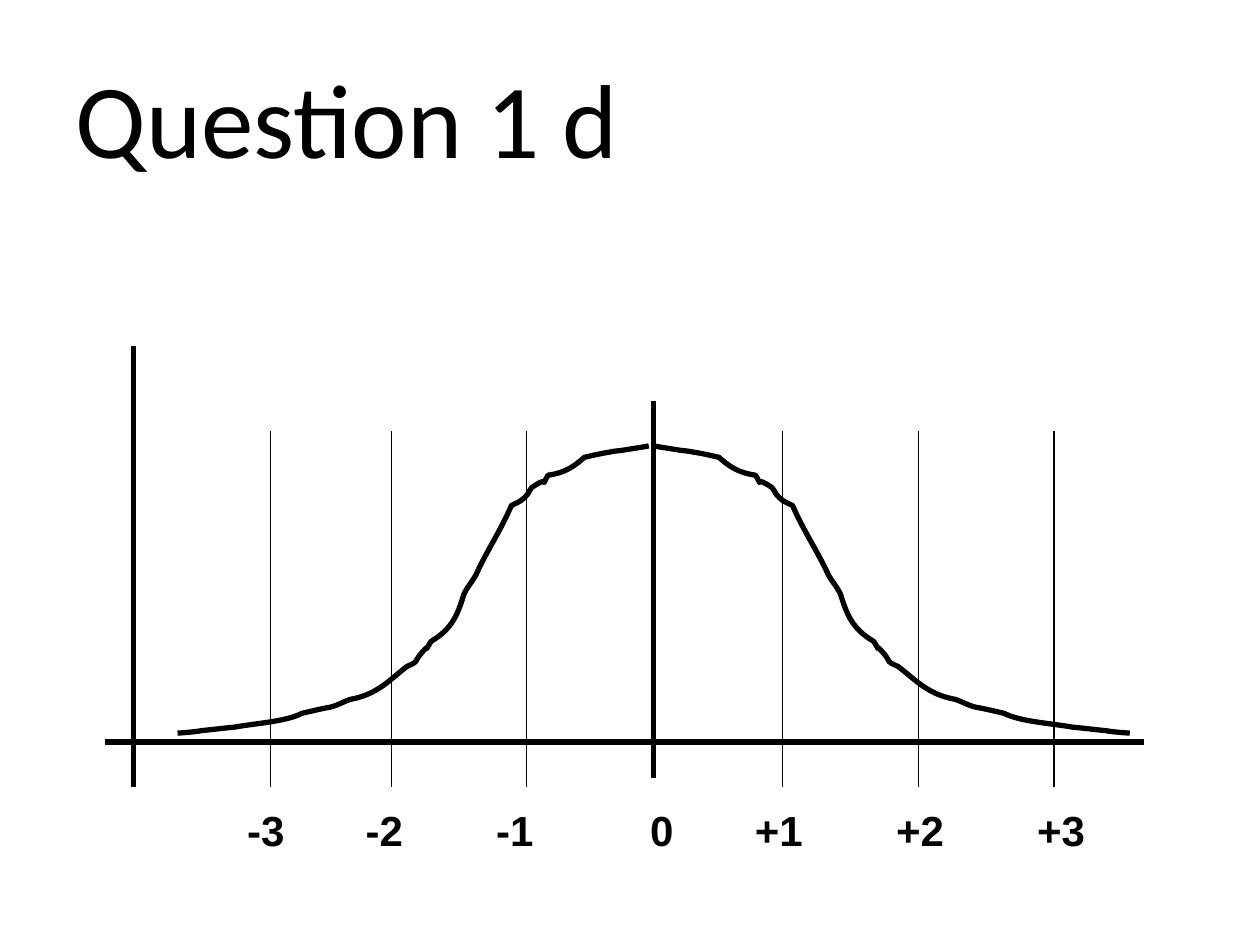
from dataclasses import dataclass

from lxml import etree
from pptx import Presentation
from pptx.dml.color import RGBColor
from pptx.enum.shapes import MSO_CONNECTOR
from pptx.enum.text import MSO_ANCHOR, PP_ALIGN
from pptx.oxml.ns import qn
from pptx.util import Cm, Pt

STRAIGHT = MSO_CONNECTOR.STRAIGHT
LEFT, MIDDLE, TOP = PP_ALIGN.LEFT, MSO_ANCHOR.MIDDLE, MSO_ANCHOR.TOP
BLACK = RGBColor(0x00, 0x00, 0x00)
THICK, THIN = 3, 0.75
TITLE_ONLY = 5


@dataclass(frozen=True)
class Rule:
    """A straight line, in centimetres."""
    x1: float
    y1: float
    x2: float
    y2: float
    weight: float


@dataclass(frozen=True)
class Deviation:
    """A mark on the scale: its label and the centre of that label."""
    label: str
    label_x: float


@dataclass(frozen=True)
class CurveHalf:
    """One side of the bell: where it starts and how it is stretched."""
    start_x: float
    stretch: float


BASELINE = Rule(2.11, 14.96, 23.06, 14.96, THICK)
UPRIGHTS = [
    Rule(13.18, 8.08, 13.18, 15.69, THICK),
    Rule(2.69, 6.98, 2.69, 15.87, THICK),
]
GRID = [Rule(x, 8.68, x, 15.87, THIN)
        for x in (10.62, 7.89, 5.46, 18.52, 15.78, 21.25)]

DEVIATIONS = [
    Deviation("-3", 5.36), Deviation("-2", 7.75), Deviation("-1", 10.38),
    Deviation("0", 13.34),
    Deviation("+1", 15.7), Deviation("+2", 18.55), Deviation("+3", 21.39),
]

HALVES = [CurveHalf(13.08, -1), CurveHalf(13.18, 1.01)]
# Distance from the peak and height on the slide: start, then three per Bezier
BELL = [
    (0, 8.99),
    (0.15, 9.02), (0.3, 9.04), (0.48, 9.07),
    (0.58, 9.09), (0.71, 9.09), (0.81, 9.12),
    (0.97, 9.14), (1.3, 9.22), (1.3, 9.22),
    (1.5, 9.4), (1.68, 9.53), (2.03, 9.58),
    (2.24, 9.93), (1.93, 9.53), (2.36, 9.83),
    (2.41, 9.86), (2.39, 9.91), (2.44, 9.96),
    (2.54, 10.08), (2.59, 10.11), (2.77, 10.19),
    (2.97, 10.67), (3.28, 11.13), (3.48, 11.58),
    (3.56, 11.73), (3.68, 11.86), (3.73, 11.99),
    (3.84, 12.34), (3.94, 12.67), (4.39, 12.93),
    (4.6, 13.28), (4.32, 12.85), (4.62, 13.21),
    (4.67, 13.26), (4.67, 13.31), (4.7, 13.34),
    (4.75, 13.39), (4.83, 13.41), (4.88, 13.44),
    (5.21, 13.69), (5.46, 14), (6.02, 14.1),
    (6.17, 14.15), (6.32, 14.25), (6.5, 14.27),
    (6.65, 14.3), (6.99, 14.38), (6.99, 14.38),
    (7.32, 14.55), (7.92, 14.58), (8.36, 14.66),
    (8.59, 14.68), (8.81, 14.71), (9.02, 14.73),
    (9.17, 14.76), (9.5, 14.78), (9.5, 14.78),
]


def write_text(frame, text: str, *, font: str, size: float, bold: bool = False,
               anchor=TOP) -> None:
    frame.word_wrap = True
    frame.vertical_anchor = anchor
    paragraph = frame.paragraphs[0]
    paragraph.alignment = LEFT
    run = paragraph.add_run()
    run.text = text
    run.font.name, run.font.size, run.font.bold = font, Pt(size), bold
    run.font.color.rgb = BLACK


def draw_rule(shapes, rule: Rule) -> None:
    line = shapes.add_connector(
        STRAIGHT, Cm(rule.x1), Cm(rule.y1), Cm(rule.x2), Cm(rule.y2))
    line.line.color.rgb = BLACK
    line.line.width = Pt(rule.weight)
    etree.SubElement(line._element.spPr, qn("a:effectLst"))


def draw_half(shapes, half: CurveHalf) -> None:
    points = [(Cm(half.start_x + half.stretch * dx), Cm(y)) for dx, y in BELL]
    builder = shapes.build_freeform(*points[0])
    builder.add_line_segments(points[3::3], close=False)
    curve = builder.convert_to_shape()
    curve.fill.background()
    curve.line.color.rgb = BLACK
    curve.line.width = Pt(THICK)
    curve.shadow.inherit = False
    # Bend each straight segment into its cubic Bezier
    segments = list(curve._element.iter(qn("a:lnTo")))
    for index, segment in enumerate(segments):
        segment.tag = qn("a:cubicBezTo")
        for child in list(segment):
            segment.remove(child)
        for x, y in points[3 * index + 1:3 * index + 4]:
            etree.SubElement(segment, qn("a:pt"), x=str(int(x - curve.left)),
                             y=str(int(y - curve.top)))


def draw_scale(shapes, deviations: list[Deviation]) -> None:
    left, inset = 4.01, 0.25
    scale = shapes.add_textbox(Cm(left), Cm(16.08), Cm(18.42), Cm(1.27))
    frame = scale.text_frame
    frame.margin_left = frame.margin_right = Cm(inset)
    frame.margin_top = Cm(0.13)
    write_text(frame, "".join("\t" + d.label for d in deviations),
               font="Arial", size=24, bold=True)
    # Each label is centred on its own tab stop
    properties = frame.paragraphs[0]._p.get_or_add_pPr()
    stops = etree.SubElement(properties, qn("a:tabLst"))
    for deviation in deviations:
        position = Cm(deviation.label_x - left - inset)
        etree.SubElement(stops, qn("a:tab"), pos=str(int(position)), algn="ctr")


def main() -> None:
    deck = Presentation()
    deck.slide_width, deck.slide_height = Cm(25.4), Cm(19.05)
    slide = deck.slides.add_slide(deck.slide_layouts[TITLE_ONLY])

    # Title
    title = slide.shapes.title
    title.left, title.top = Cm(1.27), Cm(0.94)
    title.width, title.height = Cm(22.86), Cm(2.82)
    write_text(title.text_frame, "Question 1 d", font="Calibri", size=60,
               anchor=MIDDLE)

    # Bell curve with its axes and deviation lines, as one group
    diagram = slide.shapes.add_group_shape().shapes
    draw_rule(diagram, BASELINE)
    for half in HALVES:
        draw_half(diagram, half)
    for rule in UPRIGHTS + GRID:
        draw_rule(diagram, rule)

    # Scale labels
    draw_scale(diagram, DEVIATIONS)

    deck.save("out.pptx")


if __name__ == "__main__":
    main()
